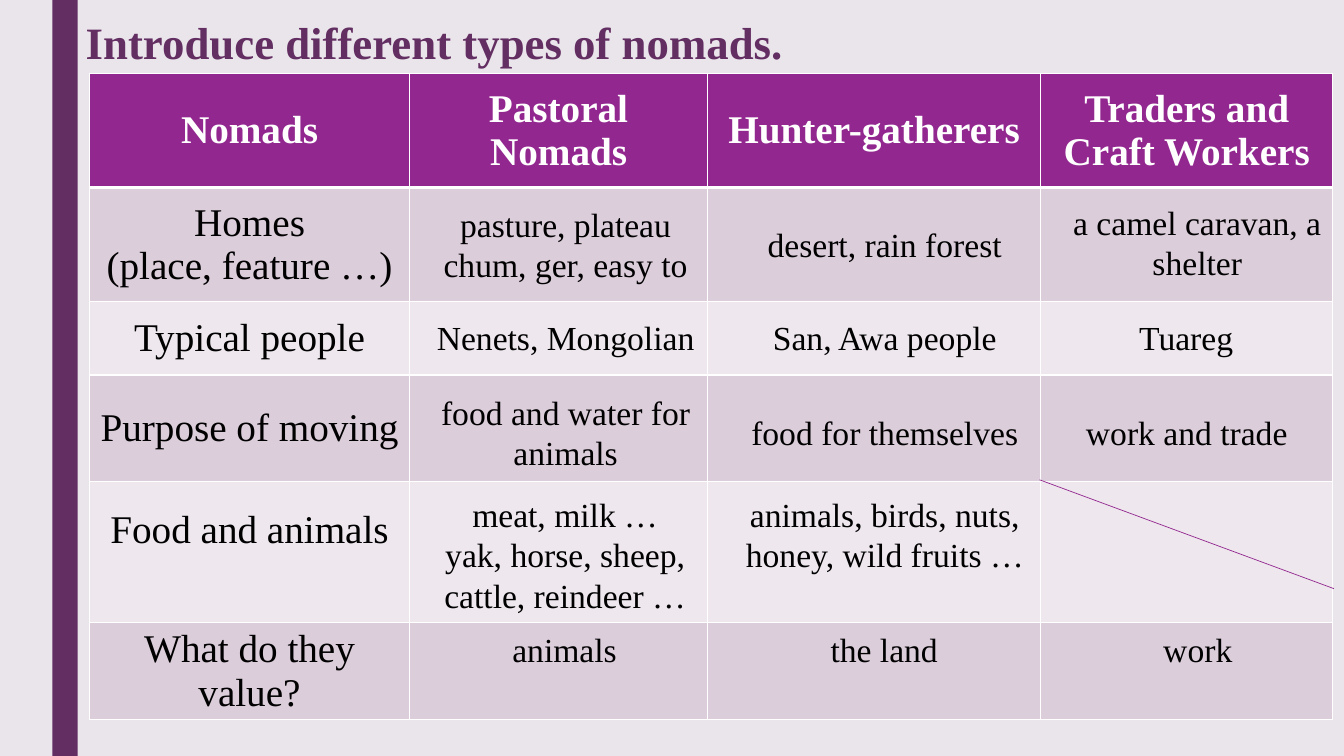
from lxml import etree
from pptx import Presentation
from pptx.dml.color import RGBColor
from pptx.enum.shapes import MSO_CONNECTOR, MSO_SHAPE
from pptx.enum.text import MSO_ANCHOR, MSO_AUTO_SIZE, PP_ALIGN
from pptx.oxml.ns import qn
from pptx.util import Inches, Pt

LEFT, CENTER = PP_ALIGN.LEFT, PP_ALIGN.CENTER
TOP, MIDDLE = MSO_ANCHOR.TOP, MSO_ANCHOR.MIDDLE
FIXED, GROW = MSO_AUTO_SIZE.NONE, MSO_AUTO_SIZE.SHAPE_TO_FIT_TEXT
RECT, STRAIGHT = MSO_SHAPE.RECTANGLE, MSO_CONNECTOR.STRAIGHT

HUES = {
    "back": "EAE5EB", "band": "632E62", "head": "92278F", "dark": "DCCDDB",
    "light": "EEE8EE", "white": "FFFFFF", "black": "000000",
}
FONTS = {
    "title": {"size": Pt(32), "bold": True},
    "head": {"size": Pt(28), "bold": True},
    "label": {"size": Pt(28), "bold": False},
    "note": {"size": Pt(24), "bold": False},
}

# Table data: column widths, row heights, headings and row labels
COLS = [3.17, 2.96, 3.3, 2.9]
ROWS = [1.13, 1.13, 0.73, 1.06, 1.4, 0.96]
HEADS = ["Nomads", "Pastoral Nomads", "Hunter-gatherers", "Traders and Craft Workers"]
LABELS = ["Homes\n(place, feature …)", "Typical people", "Purpose of moving",
          "Food and animals", "What do they value?"]

# Answers: text, left, top, width, height
NOTES = [
    ("pasture, plateau\nchum, ger, easy to", 4.19, 1.97, 2.84, 0.91),
    ("desert, rain forest", 7.25, 2.17, 3.05, 0.5),
    ("a camel caravan, a shelter", 10.41, 1.95, 2.93, 0.91),
    ("Nenets, Mongolian", 4.19, 3.09, 2.84, 0.5),
    ("San, Awa people", 7.25, 3.09, 3.05, 0.5),
    ("Tuareg", 10.3, 3.09, 2.93, 0.5),
    ("food and water for animals", 4.19, 3.84, 2.84, 0.91),
    ("food for themselves", 7.25, 4.04, 3.05, 0.5),
    ("work and trade", 10.31, 4.04, 2.92, 0.5),
    ("meat, milk …\nyak, horse, sheep, cattle, reindeer …", 4.03, 4.85, 3.15, 1.72),
    ("animals, birds, nuts, honey, wild fruits …", 7.25, 4.85, 3.05, 0.91),
    ("animals", 4.48, 6.19, 2.24, 0.5),
    ("the land", 7.57, 6.19, 2.4, 0.5),
    ("work", 10.86, 6.19, 2.04, 0.5),
]


def color(name):
    return RGBColor.from_string(HUES[name])


class Deck:
    def __init__(self, slide):
        self.slide = slide
        self.shapes = slide.shapes
        self.face = "Times New Roman"

    def paint(self, part, hue):
        part.fill.solid()
        part.fill.fore_color.rgb = color(hue)

    def label(self, frame, text, font, hue, align=CENTER):
        frame.text = text
        for para in frame.paragraphs:
            para.alignment = align
            for run in para.runs:
                for key, value in {"name": self.face, **FONTS[font]}.items():
                    setattr(run.font, key, value)
                run.font.color.rgb = color(hue)

    def title(self, text, x, y, w, h):
        box = self.shapes.title
        place = {"left": x, "top": y, "width": w, "height": h}
        for key, value in place.items():
            setattr(box, key, Inches(value))
        frame = box.text_frame
        frame.auto_size, frame.vertical_anchor = FIXED, MIDDLE
        self.label(frame, text, "title", "band", LEFT)

    def rect(self, hue, x, y, w, h):
        box = self.shapes.add_shape(RECT, Inches(x), Inches(y), Inches(w), Inches(h))
        box.shadow.inherit = False
        self.paint(box, hue)
        box.line.fill.background()

    def note(self, text, x, y, w, h):
        box = self.shapes.add_textbox(Inches(x), Inches(y), Inches(w), Inches(h))
        frame = box.text_frame
        setup = {"word_wrap": True, "auto_size": GROW, "vertical_anchor": TOP}
        for key, value in setup.items():
            setattr(frame, key, value)
        self.label(frame, text, "note", "black")

    def line(self, hue, width, x, y, x2, y2):
        line = self.shapes.add_connector(
            STRAIGHT, Inches(x), Inches(y), Inches(x2), Inches(y2))
        line.line.color.rgb = color(hue)
        line.line.width = Pt(width)
        etree.SubElement(line._element.spPr, qn("a:effectLst"))

    def edge(self, cell, sides):
        props = cell._tc.get_or_add_tcPr()
        for side, width in sides.items():
            rule = etree.SubElement(props, qn("a:ln" + side), w=str(Pt(width)))
            fill = etree.SubElement(rule, qn("a:solidFill"))
            etree.SubElement(fill, qn("a:srgbClr"), val=HUES["white"])

    def table(self, x, y, cols, rows, heads, labels):
        grid = self.shapes.add_table(
            len(rows), len(cols), Inches(x), Inches(y),
            Inches(sum(cols)), Inches(sum(rows))).table
        for col, width in zip(grid.columns, cols):
            col.width = Inches(width)
        for row, height in zip(grid.rows, rows):
            row.height = Inches(height)
        for r in range(len(rows)):
            hue = "head" if r == 0 else "dark" if r % 2 else "light"
            for c in range(len(cols)):
                cell = grid.cell(r, c)
                self.edge(cell, {"L": 1, "R": 1, "T": 3 if r == 1 else 1,
                                 "B": 3 if r == 0 else 1})
                self.paint(cell, hue)
                cell.vertical_anchor = MIDDLE
                if r == 0:
                    self.label(cell.text_frame, heads[c], "head", "white")
                elif c == 0:
                    self.label(cell.text_frame, labels[r - 1], "label", "black")
        return grid


def main():
    prs = Presentation()
    prs.slide_width, prs.slide_height = Inches(13.33), Inches(7.5)
    deck = Deck(prs.slides.add_slide(prs.slide_layouts[5]))

    # Background, side band and title
    deck.paint(deck.slide.background, "back")
    deck.rect("band", 0.52, 0, 0.25, 7.5)
    deck.title("Introduce different types of nomads.", 0.75, 0.09, 11.13, 0.65)

    # Table, with the food label raised above the middle
    grid = deck.table(0.89, 0.73, COLS, ROWS, HEADS, LABELS)
    grid.cell(4, 0).margin_bottom = Inches(0.48)

    # Answers over the table, and the stroke through the empty cell
    for note in NOTES:
        deck.note(*note)
    deck.line("head", 0.5, 10.31, 4.76, 13.23, 5.84)

    prs.save("out.pptx")


if __name__ == "__main__":
    main()
